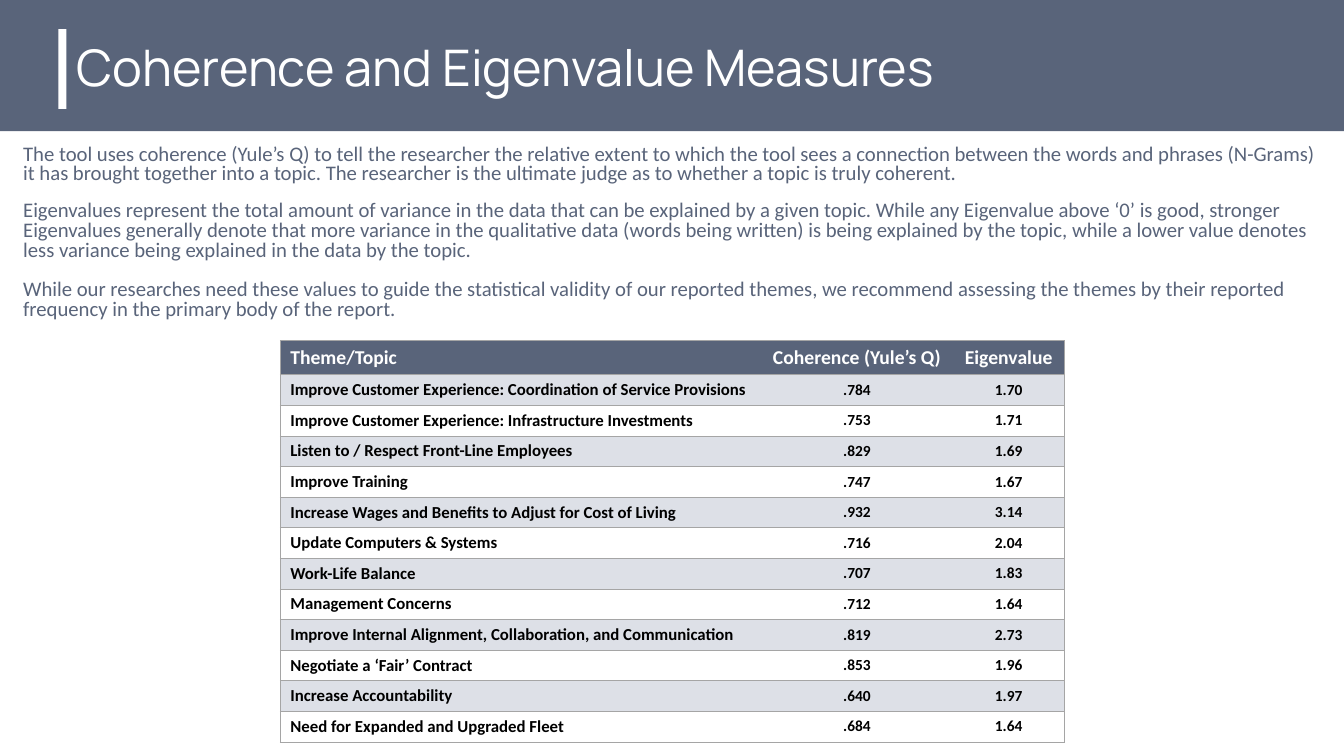
"""Build the slide on coherence and eigenvalue measures, with its table of topics."""
from dataclasses import dataclass

from lxml import etree
from pptx import Presentation
from pptx.dml.color import RGBColor
from pptx.enum.shapes import MSO_SHAPE
from pptx.enum.text import MSO_ANCHOR, MSO_AUTO_SIZE, PP_ALIGN
from pptx.oxml.ns import qn
from pptx.util import Inches, Pt

RECT = MSO_SHAPE.RECTANGLE
TOP, MIDDLE = MSO_ANCHOR.TOP, MSO_ANCHOR.MIDDLE
LEFT, CENTER = PP_ALIGN.LEFT, PP_ALIGN.CENTER
NO_AUTOFIT = MSO_AUTO_SIZE.NONE


@dataclass(frozen=True)
class Theme:
    slate: str = "59647A"
    band: str = "DDE0E7"
    rule: str = "A5A5A5"
    white: str = "FFFFFF"
    black: str = "000000"
    title_font: str = "Manrope"
    body_font: str = "Calibri"
    title: float = 36
    body: float = 14.8
    header: float = 14
    topic: float = 12
    value: float = 11


T = Theme()

PARAGRAPHS = [
    ("The tool uses coherence (Yule’s Q) to tell the researcher the relative extent to which "
     "the tool sees a connection between the words and phrases (N-Grams) it has brought together "
     "into a topic. The researcher is the ultimate judge as to whether a topic is truly coherent.", 0),
    ("Eigenvalues represent the total amount of variance in the data that can be explained by a "
     "given topic. While any Eigenvalue above ‘0’ is good, stronger Eigenvalues generally denote "
     "that more variance in the qualitative data (words being written) is being explained by the "
     "topic, while a lower value denotes less variance being explained in the data by the topic.", 12),
    ("While our researches need these values to guide the statistical validity of our reported "
     "themes, we recommend assessing the themes by their reported frequency in the primary body "
     "of the report.", 14),
]

ROWS = [
    ("Theme/Topic", "Coherence (Yule’s Q)", "Eigenvalue"),
    ("Improve Customer Experience: Coordination of Service Provisions", ".784", "1.70"),
    ("Improve Customer Experience: Infrastructure Investments", ".753", "1.71"),
    ("Listen to / Respect Front-Line Employees", ".829", "1.69"),
    ("Improve Training", ".747", "1.67"),
    ("Increase Wages and Benefits to Adjust for Cost of Living", ".932", "3.14"),
    ("Update Computers & Systems", ".716", "2.04"),
    ("Work-Life Balance", ".707", "1.83"),
    ("Management Concerns", ".712", "1.64"),
    ("Improve Internal Alignment, Collaboration, and Communication", ".819", "2.73"),
    ("Negotiate a ‘Fair’ Contract", ".853", "1.96"),
    ("Increase Accountability", ".640", "1.97"),
    ("Need for Expanded and Upgraded Fleet", ".684", "1.64"),
]
COL_WIDTHS = [4.77, 1.9, 1.11]
HEADER_HEIGHT, ROW_HEIGHT = 0.33, 0.3


def style(p, font, size, color, bold=False):
    for r in p.runs:
        r.font.name = font
        r.font.size = Pt(size)
        r.font.bold = bold
        r.font.color.rgb = RGBColor.from_string(color)


def set_borders(cell, sides):
    tcPr = cell._tc.get_or_add_tcPr()
    for side in "LRTB":
        ln = etree.SubElement(tcPr, qn(f"a:ln{side}"), w=str(Pt(0.5)))
        if side in sides:
            fill = etree.SubElement(ln, qn("a:solidFill"))
            etree.SubElement(fill, qn("a:srgbClr"), val=T.rule)
        else:
            etree.SubElement(ln, qn("a:noFill"))


prs = Presentation()
prs.slide_width, prs.slide_height = Inches(13.33), Inches(7.5)
s = prs.slides.add_slide(prs.slide_layouts[1])
title, body = s.placeholders

bars = [((-0.03, -0.01, 13.43, 1.31), T.slate), ((0.58, 0.29, 0.08, 0.79), T.white)]
for box, color in bars:
    sp = s.shapes.add_shape(RECT, *map(Inches, box))
    sp.shadow.inherit = False
    sp.fill.solid()
    sp.fill.fore_color.rgb = RGBColor.from_string(color)
    sp.line.fill.background()
    title._element.addprevious(sp._element)

title.left, title.top, title.width, title.height = map(Inches, (0.66, 0.09, 10.3, 1.21))
tf = title.text_frame
tf.text = "Coherence and Eigenvalue Measures"
tf.auto_size = NO_AUTOFIT
tf.vertical_anchor = MIDDLE
tf.margin_left = tf.margin_right = tf.margin_top = tf.margin_bottom = Inches(0.1)
p = tf.paragraphs[0]
p.alignment = LEFT
p.line_spacing = 0.9
style(p, T.title_font, T.title, T.white)

body.left, body.top, body.width, body.height = map(Inches, (0.13, 1.39, 13.07, 1.88))
tf = body.text_frame
tf.auto_size = NO_AUTOFIT
tf.vertical_anchor = TOP
for i, (text, space) in enumerate(PARAGRAPHS):
    p = tf.add_paragraph() if i else tf.paragraphs[0]
    p.text = text
    pPr = p._p.get_or_add_pPr()
    pPr.set("marL", "0")
    pPr.set("indent", "0")
    etree.SubElement(pPr, qn("a:buNone"))
    p.line_spacing = 0.8
    p.space_before = Pt(space)
    style(p, T.body_font, T.body, T.slate)

height = HEADER_HEIGHT + ROW_HEIGHT * (len(ROWS) - 1)
table = s.shapes.add_table(len(ROWS), len(COL_WIDTHS), Inches(2.78), Inches(3.38),
                           Inches(sum(COL_WIDTHS)), Inches(height)).table
table.horz_banding = False
for column, width in zip(table.columns, COL_WIDTHS):
    column.width = Inches(width)
for i, values in enumerate(ROWS):
    table.rows[i].height = Inches(ROW_HEIGHT if i else HEADER_HEIGHT)
    for j, value in enumerate(values):
        cell = table.cell(i, j)
        cell.text = value
        set_borders(cell, "TB" + {0: "L", 2: "R"}.get(j, ""))
        if i == 0:
            fill, color, size = T.slate, T.white, T.header
        else:
            fill, color = (T.band if i % 2 else T.white), T.black
            size = T.value if j else T.topic
        cell.fill.solid()
        cell.fill.fore_color.rgb = RGBColor.from_string(fill)
        cell.vertical_anchor = MIDDLE if i else TOP
        p = cell.text_frame.paragraphs[0]
        p.alignment = CENTER if j else LEFT
        style(p, T.body_font, size, color, bold=True)

prs.save("out.pptx")
